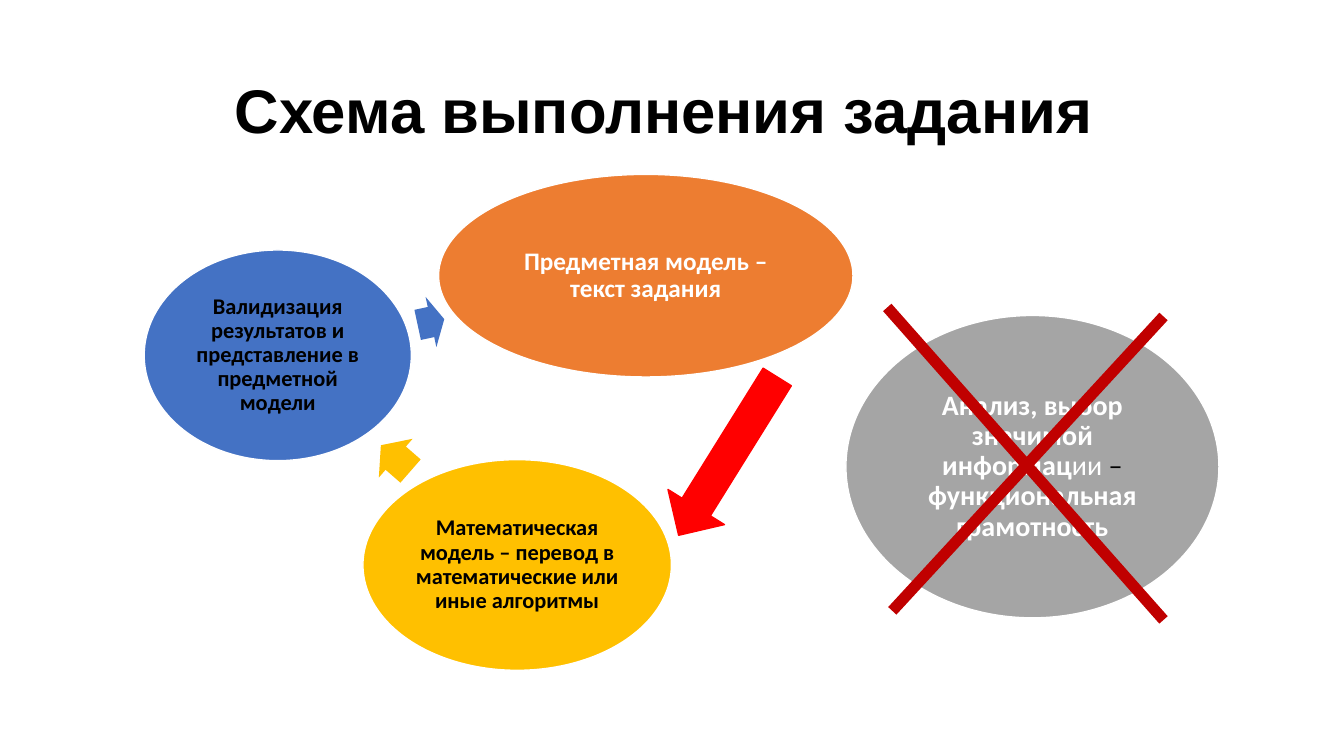
from dataclasses import dataclass

from lxml import etree
from pptx import Presentation
from pptx.dml.color import RGBColor
from pptx.enum.shapes import MSO_CONNECTOR, MSO_SHAPE
from pptx.enum.text import MSO_ANCHOR, PP_ALIGN
from pptx.oxml.ns import qn
from pptx.util import Inches, Pt

ELLIPSE = MSO_SHAPE.OVAL
RIGHT_ARROW = MSO_SHAPE.RIGHT_ARROW
DOWN_ARROW = MSO_SHAPE.DOWN_ARROW
STRAIGHT = MSO_CONNECTOR.STRAIGHT
MIDDLE = MSO_ANCHOR.MIDDLE
CENTER = PP_ALIGN.CENTER


@dataclass(frozen=True)
class Theme:
    title_font: str = "Arial"
    body_font: str = "Calibri"
    title_size: int = 44
    large: int = 20
    medium: int = 18
    small: int = 16
    black: str = "000000"
    white: str = "FFFFFF"
    orange: str = "ED7D31"
    gray: str = "A5A5A5"
    gold: str = "FFC000"
    blue: str = "4472C4"
    red: str = "FF0000"
    dark_red: str = "C00000"


T = Theme()
SLIDE_W, SLIDE_H = 13.33, 7.5

# Text runs: (text, colour, bold)
TITLE = [("Схема выполнения задания ", T.black, True)]
TITLE_BOX = (0.92, 0.4, 11.5, 1.45)

# Stages: (left, top, width, height), fill, text size, inset, runs
STAGES = [
    ((4.35, 1.73, 4.11, 2.01), T.orange, T.medium, 0.03,
     [("Предметная модель – текст задания", T.white, True)]),
    ((8.39, 3.13, 3.7, 3), T.gray, T.large, 0.03,
     [("Анализ, выбор значимой информац", T.white, True),
      ("ии ", T.white, False),
      ("– ", T.black, False),
      ("функциональная грамотность", T.white, True)]),
    ((3.6, 4.56, 3.06, 2.09), T.gold, T.small, 0.02,
     [("Математическая модель – перевод в математические или иные алгоритмы",
       T.black, True)]),
    ((1.43, 2.48, 2.65, 2.09), T.blue, T.small, 0.02,
     [("Валидизация результатов и представление в предметной модели",
       T.black, True)]),
]

# Arrows: kind, box, rotation, colour, shaft share of the width
ARROWS = [
    (RIGHT_ARROW, (3.73, 4.29, 0.39, 0.51), 221.1, T.gold, 0.6),
    (RIGHT_ARROW, (4.14, 2.94, 0.27, 0.51), 347.9, T.blue, 0.6),
    (DOWN_ARROW, (6.89, 3.6, 0.66, 1.85), 31.9, T.red, 0.5),
]

# Cross over the dropped stage: x1, y1, x2, y2
CROSS = [(8.8, 3.05, 11.54, 6.15), (11.54, 3.14, 8.85, 6.06)]
CROSS_WIDTH = 8


def inches(values):
    return [Inches(v) for v in values]


def rgb(value):
    return RGBColor.from_string(value)


def write(sp, runs, font, size, inset=0.1):
    tf = sp.text_frame
    tf.word_wrap = True
    tf.vertical_anchor = MIDDLE
    tf.margin_left = tf.margin_right = Inches(inset)
    tf.margin_top = tf.margin_bottom = Inches(min(inset, 0.05))
    p = tf.paragraphs[0]
    p.alignment = CENTER
    p.line_spacing = 0.9
    for text, color, bold in runs:
        r = p.add_run()
        r.text = text
        r.font.name = font
        r.font.size = Pt(size)
        r.font.bold = bold
        r.font.color.rgb = rgb(color)


def add_filled(slide, kind, box, fill, line):
    sp = slide.shapes.add_shape(kind, *inches(box))
    sp.shadow.inherit = False
    sp.fill.solid()
    sp.fill.fore_color.rgb = rgb(fill)
    sp.line.color.rgb = rgb(line)
    sp.line.width = Pt(1)
    return sp


def add_arrow(slide, kind, box, rotation, color, shaft):
    sp = add_filled(slide, kind, box, color, color)
    if kind == RIGHT_ARROW:
        sp.line.fill.background()
    sp.adjustments[0] = shaft
    sp.adjustments[1] = 0.5
    sp.rotation = rotation


def add_stroke(slide, ends):
    line = slide.shapes.add_connector(STRAIGHT, *inches(ends))
    line.line.color.rgb = rgb(T.dark_red)
    line.line.width = Pt(CROSS_WIDTH)
    etree.SubElement(line._element.spPr, qn("a:effectLst"))


def main():
    prs = Presentation()
    prs.slide_width, prs.slide_height = inches((SLIDE_W, SLIDE_H))
    slide = prs.slides.add_slide(prs.slide_layouts[6])

    title = slide.shapes.add_textbox(*inches(TITLE_BOX))
    write(title, TITLE, T.title_font, T.title_size)
    for box, fill, size, inset, runs in STAGES:
        sp = add_filled(slide, ELLIPSE, box, fill, T.white)
        write(sp, runs, T.body_font, size, inset)
    for arrow in ARROWS:
        add_arrow(slide, *arrow)
    for ends in CROSS:
        add_stroke(slide, ends)

    prs.save("out.pptx")


if __name__ == "__main__":
    main()
